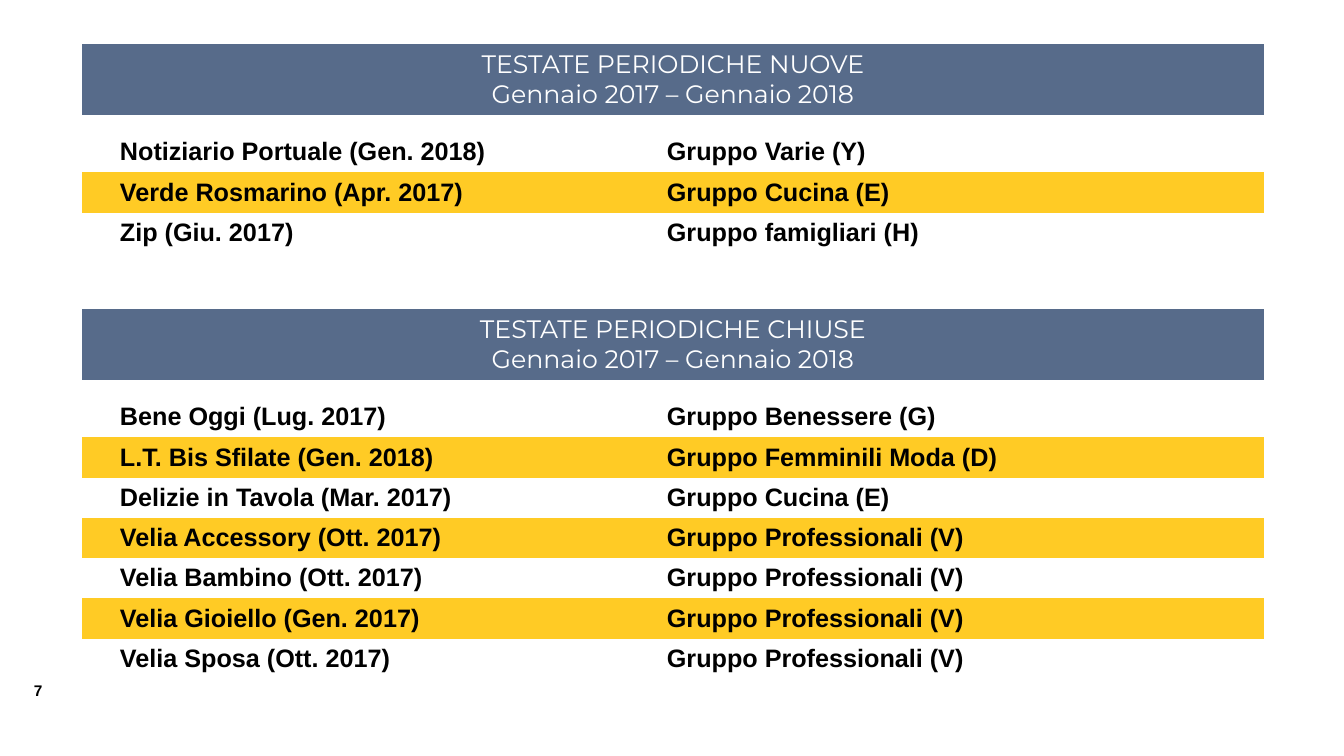
from dataclasses import dataclass

from lxml.etree import SubElement
from pptx import Presentation
from pptx.dml.color import RGBColor
from pptx.enum.text import MSO_ANCHOR as Anchor, PP_ALIGN as Align
from pptx.oxml.ns import qn
from pptx.slide import Slide
from pptx.table import Table, _Cell as Cell
from pptx.util import Emu, Pt

EMU_PER_PX = 914400 / 100.8
LEFT = 82
COLUMN_WIDTHS = (575, 607)
HEADER_HEIGHT = 71
SPACER_HEIGHT = 17
INSET = 10
TITLE_INDENT = 38
SLATE, YELLOW, WHITE, BLACK = "576B8A", "FFCB25", "FFFFFF", "000000"
NO_STYLE_NO_GRID = "{2D5ABB26-0587-4C30-8999-92F81FD0307C}"
HEADER_FONT = {"name": "Montserrat", "size": Pt(18), "bold": False}
BODY_FONT = {"name": "Arial", "size": Pt(18), "bold": True}
NUMBER_FONT = {"name": "Arial", "size": Pt(11), "bold": True}
PERIOD = "Gennaio 2017 – Gennaio 2018"


@dataclass(frozen=True)
class Listing:
    heading: str
    top: int
    body_height: int
    entries: tuple[tuple[str, str], ...]


LISTINGS = (
    Listing("TESTATE PERIODICHE NUOVE", 44, 121, (
        ("Notiziario Portuale (Gen. 2018)", "Gruppo Varie (Y)"),
        ("Verde Rosmarino (Apr. 2017)", "Gruppo Cucina (E)"),
        ("Zip (Giu. 2017)", "Gruppo famigliari (H)"),
    )),
    Listing("TESTATE PERIODICHE CHIUSE", 309, 282, (
        ("Bene Oggi (Lug. 2017)", "Gruppo Benessere (G)"),
        ("L.T. Bis Sfilate (Gen. 2018)", "Gruppo Femminili Moda (D)"),
        ("Delizie in Tavola (Mar. 2017)", "Gruppo Cucina (E)"),
        ("Velia Accessory (Ott. 2017)", "Gruppo Professionali (V)"),
        ("Velia Bambino (Ott. 2017)", "Gruppo Professionali (V)"),
        ("Velia Gioiello (Gen. 2017)", "Gruppo Professionali (V)"),
        ("Velia Sposa (Ott. 2017)", "Gruppo Professionali (V)"),
    )),
)


def px(length: float) -> Emu:
    return Emu(round(length * EMU_PER_PX))


def color(value: str) -> RGBColor:
    return RGBColor.from_string(value)


def set_attributes(target: object, values: dict) -> None:
    for name, value in values.items():
        setattr(target, name, value)


def format_cell(cell: Cell, fill: str, left_margin: int = INSET) -> None:
    cell.fill.solid()
    cell.fill.fore_color.rgb = color(fill)
    set_attributes(cell, {
        "vertical_anchor": Anchor.MIDDLE, "margin_left": px(left_margin),
        "margin_right": px(INSET), "margin_top": 0, "margin_bottom": 0,
    })


def write_cell(cell: Cell, lines: tuple[str, ...], font: dict, text_color: str,
               alignment: Align = Align.LEFT) -> None:
    cell.text = "\n".join(lines)
    for paragraph in cell.text_frame.paragraphs:
        paragraph.alignment = alignment
        for run in paragraph.runs:
            set_attributes(run.font, font)
            run.font.color.rgb = color(text_color)


def fill_spacer(table: Table) -> None:
    for cell in table.rows[1].cells:
        format_cell(cell, WHITE)
        paragraph = cell.text_frame.paragraphs[0]
        SubElement(paragraph._p, qn("a:endParaRPr"), sz="400")


def add_listing(slide: Slide, listing: Listing) -> None:
    count = len(listing.entries)
    height = HEADER_HEIGHT + SPACER_HEIGHT + listing.body_height
    table = slide.shapes.add_table(
        count + 2, 2, px(LEFT), px(listing.top), px(sum(COLUMN_WIDTHS)), px(height)
    ).table
    set_attributes(table, {"first_row": False, "horz_banding": False})
    table._tbl.tblPr.find(qn("a:tableStyleId")).text = NO_STYLE_NO_GRID
    for column, width in zip(table.columns, COLUMN_WIDTHS):
        column.width = px(width)
    row_heights = [HEADER_HEIGHT, SPACER_HEIGHT] + [listing.body_height / count] * count
    for row, row_height in zip(table.rows, row_heights):
        row.height = px(row_height)

    header = table.cell(0, 0)
    header.merge(table.cell(0, 1))
    format_cell(header, SLATE)
    write_cell(header, (listing.heading, PERIOD), HEADER_FONT, WHITE, Align.CENTER)
    fill_spacer(table)

    for index, entry in enumerate(listing.entries):
        fill = YELLOW if index % 2 else WHITE
        for column, (text, margin) in enumerate(zip(entry, (TITLE_INDENT, INSET))):
            cell = table.cell(index + 2, column)
            format_cell(cell, fill, margin)
            write_cell(cell, (text,), BODY_FONT, BLACK)


def add_slide_number(slide: Slide, number: str) -> None:
    frame = slide.shapes.add_textbox(px(24), px(676), px(42), px(29)).text_frame
    frame.word_wrap = False
    run = frame.paragraphs[0].add_run()
    run.text = number
    set_attributes(run.font, NUMBER_FONT)
    run.font.color.rgb = color(BLACK)


def main() -> None:
    presentation = Presentation()
    set_attributes(presentation, {"slide_width": px(1344), "slide_height": px(756)})
    slide = presentation.slides.add_slide(presentation.slide_layouts[6])
    add_slide_number(slide, "7")
    for listing in LISTINGS:
        add_listing(slide, listing)
    presentation.save("out.pptx")


if __name__ == "__main__":
    main()
